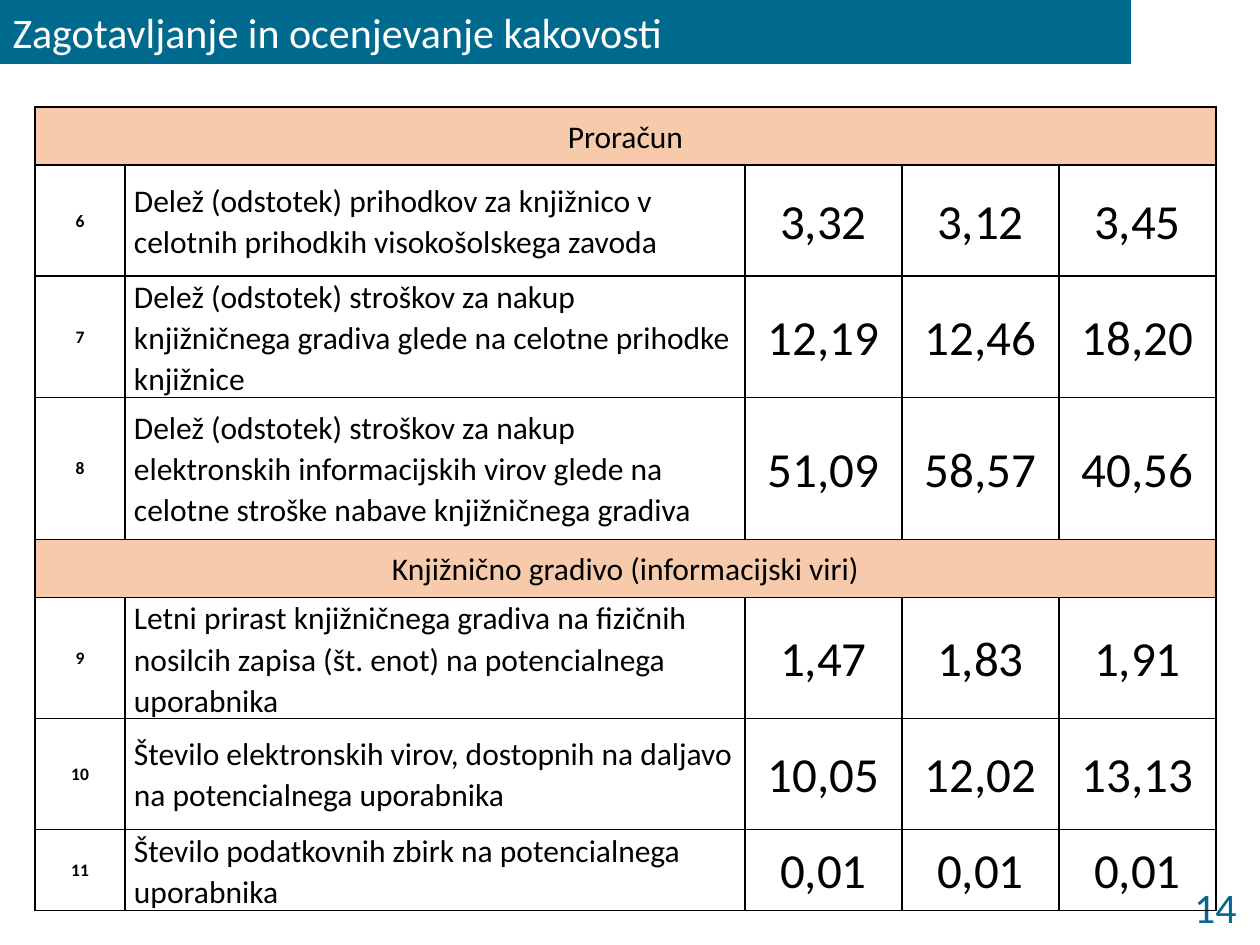
from dataclasses import dataclass

from lxml.etree import SubElement
from pptx import Presentation
from pptx.dml.color import RGBColor
from pptx.enum.text import MSO_ANCHOR as Anchor, MSO_AUTO_SIZE as AutoSize, PP_ALIGN as Align
from pptx.oxml.ns import qn
from pptx.util import Emu, Pt


@dataclass(frozen=True)
class Theme:
    font: str = "Calibri"
    accent: str = "006A8E"
    section: str = "F7CAAC"
    ink: str = "000000"
    paper: str = "FFFFFF"
    heading: int = 24
    body: int = 18
    value: int = 28
    index: int = 10
    spacing: float = 1.07


EMU_PER_PX = 914400 / 126
COLUMNS = [90, 620, 157, 157, 157]
ROWS = [
    (58, ["Proračun"]),
    (111, ["6", "Delež (odstotek) prihodkov za knjižnico v celotnih prihodkih visokošolskega zavoda",
           "3,32", "3,12", "3,45"]),
    (111, ["7", "Delež (odstotek) stroškov za nakup knjižničnega gradiva glede na celotne prihodke knjižnice",
           "12,19", "12,46", "18,20"]),
    (142, ["8", "Delež (odstotek) stroškov za nakup elektronskih informacijskih virov glede na celotne "
           "stroške nabave knjižničnega gradiva", "51,09", "58,57", "40,56"]),
    (58, ["Knjižnično gradivo (informacijski viri)"]),
    (111, ["9", "Letni prirast knjižničnega gradiva na fizičnih nosilcih zapisa (št. enot) na "
           "potencialnega uporabnika", "1,47", "1,83", "1,91"]),
    (111, ["10", "Število elektronskih virov, dostopnih na daljavo na potencialnega uporabnika",
           "10,05", "12,02", "13,13"]),
    (71, ["11", "Število podatkovnih zbirk na potencialnega uporabnika", "0,01", "0,01", "0,01"]),
]


def px(length):
    return Emu(round(length * EMU_PER_PX))


def apply(target, values):
    for name, value in values.items():
        setattr(target, name, value)


class SlideBuilder:
    def __init__(self, slide, theme):
        self.slide = slide
        self.theme = theme

    def text(self, frame, text, size, color, align, bold=False, spacing=1.0):
        paragraph = frame.paragraphs[0]
        run = paragraph.add_run()
        run.text = text
        apply(paragraph, {"alignment": align, "line_spacing": spacing})
        apply(run.font, {"name": self.theme.font, "size": Pt(size), "bold": bold})
        run.font.color.rgb = RGBColor.from_string(color)

    def title(self, text, left, top, width, height):
        shape = self.slide.shapes.title
        apply(shape, {"left": px(left), "top": px(top), "width": px(width), "height": px(height)})
        shape.fill.solid()
        shape.fill.fore_color.rgb = RGBColor.from_string(self.theme.accent)
        apply(shape.text_frame, {"auto_size": AutoSize.NONE, "vertical_anchor": Anchor.MIDDLE,
                                 "word_wrap": True})
        self.text(shape.text_frame, text, self.theme.heading, self.theme.paper, Align.LEFT)

    def page_number(self, text, left, top, width, height):
        shape = self.slide.shapes.add_textbox(px(left), px(top), px(width), px(height))
        apply(shape.text_frame, {"word_wrap": True, "vertical_anchor": Anchor.MIDDLE})
        self.text(shape.text_frame, text, self.theme.heading, self.theme.accent, Align.RIGHT)

    def border(self, cell):
        properties = cell._tc.get_or_add_tcPr()
        for side in ("lnL", "lnR", "lnT", "lnB"):
            line = SubElement(properties, qn(f"a:{side}"), w=str(Pt(1)))
            SubElement(SubElement(line, qn("a:solidFill")), qn("a:srgbClr"), val=self.theme.ink)

    def cell(self, cell, text, size, align, bold):
        apply(cell, {"margin_left": px(9), "margin_right": px(9), "margin_top": 0,
                     "margin_bottom": 0, "vertical_anchor": Anchor.MIDDLE})
        self.text(cell.text_frame, text, size, self.theme.ink, align, bold, self.theme.spacing)

    def table(self, rows, columns, left, top):
        theme = self.theme
        height = sum(row_height for row_height, _ in rows)
        frame = self.slide.shapes.add_table(len(rows), len(columns), px(left), px(top),
                                            px(sum(columns)), px(height))
        table = frame.table
        apply(table, {"first_row": False, "horz_banding": False})
        for column, width in zip(table.columns, columns):
            column.width = px(width)
        formats = [(theme.index, Align.CENTER, True), (theme.body, Align.LEFT, False)]
        formats += [(theme.value, Align.CENTER, False)] * 3
        for row, (row_height, texts) in zip(table.rows, rows):
            row.height = px(row_height)
            cells = list(row.cells)
            is_section = len(texts) == 1
            for cell in cells:
                self.border(cell)
                if is_section:
                    cell.fill.solid()
                    cell.fill.fore_color.rgb = RGBColor.from_string(theme.section)
                else:
                    cell.fill.background()
            if is_section:
                cells[0].merge(cells[-1])
            row_formats = [(theme.body, Align.CENTER, False)] if is_section else formats
            for cell, text, style in zip(cells, texts, row_formats):
                self.cell(cell, text, *style)


def main():
    presentation = Presentation()
    apply(presentation, {"slide_width": px(1260), "slide_height": px(945)})
    slide = presentation.slides.add_slide(presentation.slide_layouts[5])
    builder = SlideBuilder(slide, Theme())
    builder.title("Zagotavljanje in ocenjevanje kakovosti", 0, 0, 1131, 64)
    builder.page_number("14", 1125, 880, 124, 54)
    builder.table(ROWS, COLUMNS, 35, 107)
    presentation.save("out.pptx")


if __name__ == "__main__":
    main()
